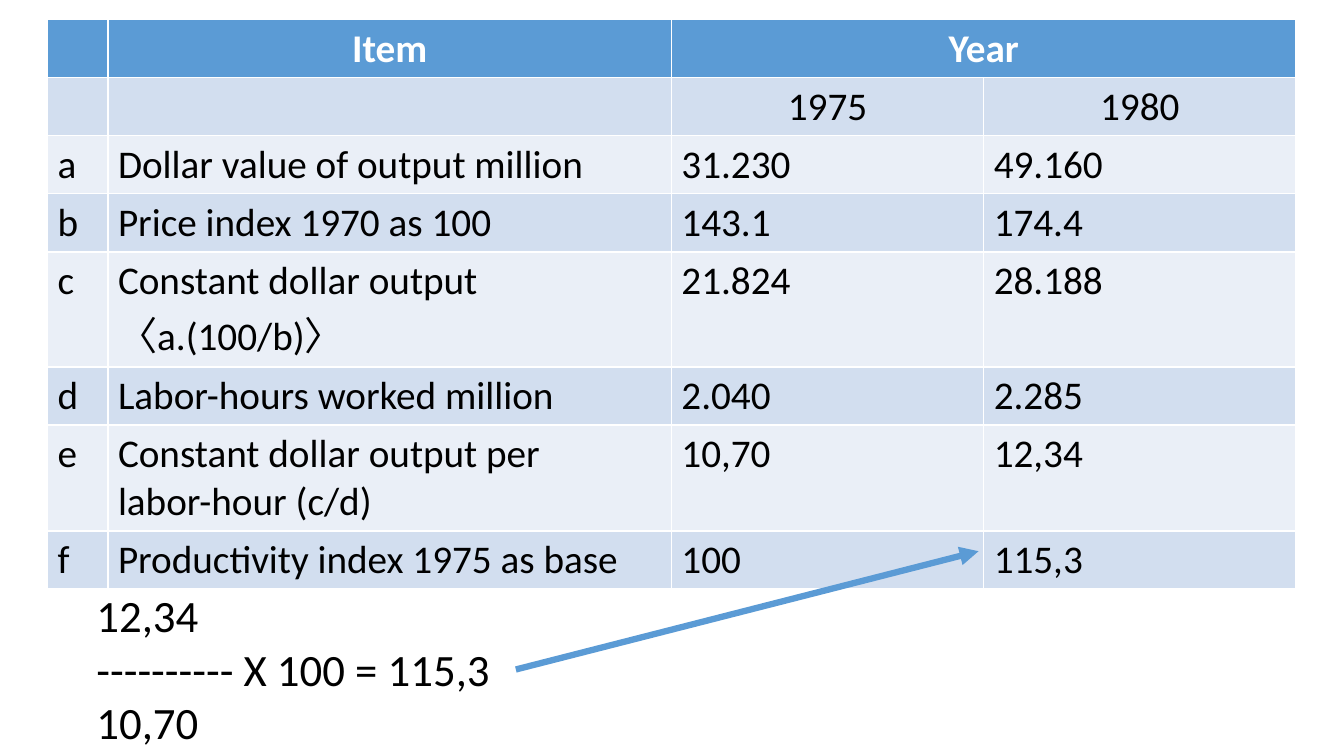
from dataclasses import dataclass

from lxml.etree import SubElement
from pptx import Presentation
from pptx.dml.color import RGBColor
from pptx.enum.shapes import MSO_CONNECTOR
from pptx.enum.text import PP_ALIGN
from pptx.oxml.ns import qn
from pptx.slide import Slide
from pptx.text.text import TextFrame
from pptx.util import Cm, Pt

BLUE, WHITE, BLACK = "5B9BD5", "FFFFFF", "000000"
BANDS = ("D2DEEF", "EAEFF7")
COLUMN_WIDTHS = (1.52, 14.2, 7.87, 7.87)
LINE_HEIGHT = 1.46


@dataclass(frozen=True)
class Row:
    """One table row, with its height in centimetres."""

    cells: tuple[str, str, str, str]
    height: float = LINE_HEIGHT
    centered: bool = False


ROWS = (
    Row(("", "Item", "Year", ""), centered=True),
    Row(("", "", "1975", "1980"), centered=True),
    Row(("a", "Dollar value of output million", "31.230", "49.160")),
    Row(("b", "Price index 1970 as 100", "143.1", "174.4")),
    Row(("c", "Constant dollar output\n〈a.(100/b)〉", "21.824", "28.188"), 2.9),
    Row(("d", "Labor-hours worked million", "2.040", "2.285")),
    Row(("e", "Constant dollar output per\nlabor-hour (c/d)", "10,70", "12,34"), 2.67),
    Row(("f", "Productivity index 1975 as base", "100", "115,3")),
)


def color(value: str) -> RGBColor:
    """Turn a hex string into a colour."""
    return RGBColor.from_string(value)


def write_text(frame: TextFrame, text: str, *, size: float = 28, fill: str = BLACK,
               bold: bool = False, align: PP_ALIGN = PP_ALIGN.LEFT) -> None:
    """Write text into a frame, one paragraph per line."""
    frame.text = text
    for paragraph in frame.paragraphs:
        paragraph.alignment = align
        font = paragraph.font
        font.size, font.bold, font.name = Pt(size), bold, "Calibri"
        font.color.rgb = color(fill)
        for run in paragraph.runs:
            run.font.size, run.font.bold, run.font.name = Pt(size), bold, "Calibri"
            run.font.color.rgb = color(fill)


def add_productivity_table(slide: Slide) -> None:
    """Draw the productivity table with its merged year heading."""
    frame = slide.shapes.add_table(
        len(ROWS), len(COLUMN_WIDTHS), Cm(1.2), Cm(0.5),
        Cm(sum(COLUMN_WIDTHS)), Cm(sum(row.height for row in ROWS)))
    table = frame.table
    for column, width in zip(table.columns, COLUMN_WIDTHS):
        column.width = Cm(width)
    for row_index, row in enumerate(ROWS):
        table.rows[row_index].height = Cm(row.height)
        heading = row_index == 0
        for column_index, text in enumerate(row.cells):
            cell = table.cell(row_index, column_index)
            cell.fill.solid()
            cell.fill.fore_color.rgb = color(BLUE if heading else BANDS[(row_index - 1) % 2])
            write_text(cell.text_frame, text, fill=WHITE if heading else BLACK, bold=heading,
                       align=PP_ALIGN.CENTER if row.centered else PP_ALIGN.LEFT)
    table.cell(0, 2).merge(table.cell(0, 3))


def add_formula(slide: Slide) -> None:
    """Write the index calculation below the table."""
    box = slide.shapes.add_textbox(Cm(2.18), Cm(14.68), Cm(29.5), Cm(4.37))
    box.text_frame.word_wrap = True
    write_text(box.text_frame, "12,34\n---------- X 100 = 115,3\n10,70", size=32)


def add_result_arrow(slide: Slide) -> None:
    """Point from the calculation to its result in the table."""
    arrow = slide.shapes.add_connector(
        MSO_CONNECTOR.STRAIGHT, Cm(13), Cm(16.87), Cm(24.66), Cm(13.89))
    arrow.line.color.rgb = color(BLUE)
    arrow.line.width = Pt(4.5)
    properties = arrow.element.spPr
    SubElement(properties.find(qn("a:ln")), qn("a:tailEnd"), type="triangle")
    SubElement(properties, qn("a:effectLst"))


def main() -> None:
    """Build and save the slide."""
    presentation = Presentation()
    presentation.slide_width, presentation.slide_height = Cm(33.87), Cm(19.05)
    slide = presentation.slides.add_slide(presentation.slide_layouts[6])
    add_productivity_table(slide)
    add_formula(slide)
    add_result_arrow(slide)
    presentation.save("out.pptx")


if __name__ == "__main__":
    main()
